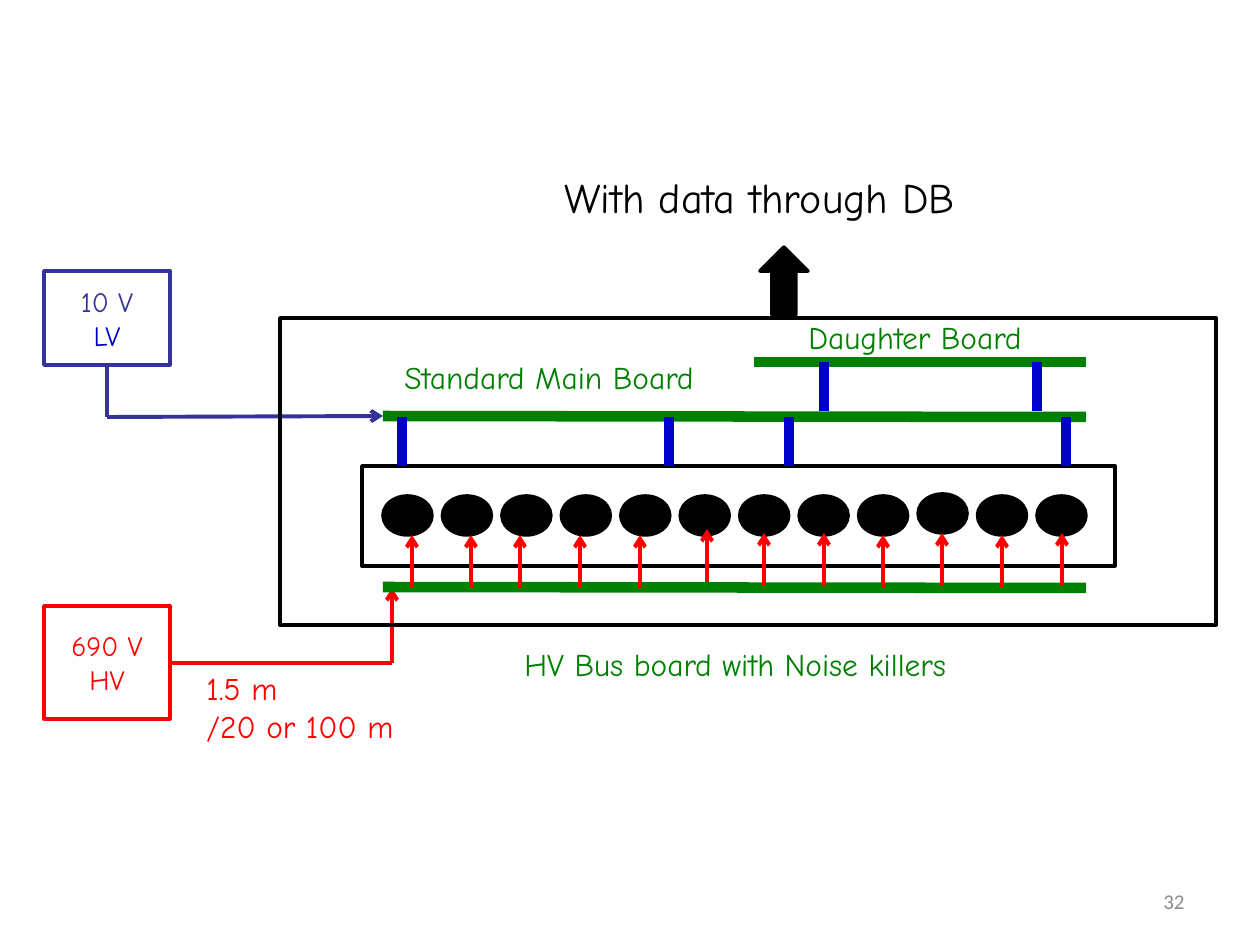
import pptx
import pptx.util
import pptx.dml.color
import pptx.enum.shapes
import pptx.enum.text
import pptx.oxml.ns
import lxml.etree
from dataclasses import dataclass

PX = 914400 / 126  # EMU in one px
SHAPE = pptx.enum.shapes.MSO_SHAPE
ALIGN = pptx.enum.text.PP_ALIGN
ANCHOR = pptx.enum.text.MSO_ANCHOR


@dataclass(frozen=True)
class Theme:
    font: str = "Comic Neue"
    number_font: str = "Calibri"
    black: str = "000000"
    green: str = "008000"
    blue: str = "0000CC"
    navy: str = "333399"
    red: str = "FF0000"
    grey: str = "8C8C8C"
    heading: int = 24
    label: int = 18
    supply: int = 16
    number: int = 12
    outline: float = 2
    wire: float = 2.25
    board: float = 6


THEME = Theme()


def emu(*lengths):
    return [round(n * PX) for n in lengths]


def rgb(color):
    return pptx.dml.color.RGBColor.from_string(color)


def add_box(slide, kind, box, color, filled=False):
    sp = slide.shapes.add_shape(kind, *emu(*box))
    sp.shadow.inherit = False
    if filled:
        sp.fill.solid()
        sp.fill.fore_color.rgb = rgb(color)
    else:
        sp.fill.background()
    sp.line.color.rgb = rgb(color)
    sp.line.width = pptx.util.Pt(THEME.outline)
    return sp


def add_line(slide, start, end, color, width, arrow=False):
    line = slide.shapes.add_connector(
        pptx.enum.shapes.MSO_CONNECTOR.STRAIGHT, *emu(*start, *end))
    line.line.color.rgb = rgb(color)
    line.line.width = pptx.util.Pt(width)
    qn = pptx.oxml.ns.qn
    if arrow:
        lxml.etree.SubElement(line.line._get_or_add_ln(), qn("a:tailEnd"), type="arrow")
    lxml.etree.SubElement(line._element.spPr, qn("a:effectLst"))


def write(tf, lines, size, align=ALIGN.LEFT, font=THEME.font):
    """Fill a text frame with one paragraph for each (text, color)."""
    for i, (text, color) in enumerate(lines):
        p = tf.add_paragraph() if i else tf.paragraphs[0]
        p.alignment = align
        r = p.add_run()
        r.text = text
        r.font.name = font
        r.font.size = pptx.util.Pt(size)
        r.font.color.rgb = rgb(color)


def add_label(slide, box, lines, color, size=THEME.label):
    tf = slide.shapes.add_textbox(*emu(*box)).text_frame
    tf.word_wrap = False
    tf.auto_size = pptx.enum.text.MSO_AUTO_SIZE.SHAPE_TO_FIT_TEXT
    write(tf, [(text, color) for text in lines], size)


def add_supply(slide, box, color, lines):
    sp = add_box(slide, SHAPE.RECTANGLE, box, color)
    sp.text_frame.vertical_anchor = ANCHOR.MIDDLE
    write(sp.text_frame, lines, THEME.supply, ALIGN.CENTER)


def add_tubes(slide, box):
    """Row of twelve tubes in a frame, each fed by an arrow from below."""
    x, y, w, h = box
    for i in range(12):
        rise = 2 if i == 9 else 0
        add_box(slide, SHAPE.OVAL, (x + 21 + i * 654 / 11, y + 30 - rise, 49, 39),
                THEME.black, filled=True)
    add_box(slide, SHAPE.RECTANGLE, box, THEME.black)


def add_feeds(slide, x, y):
    """HV arrows rising from the bus: (offset, lift) for each tube."""
    feeds = [(29, 0), (88, 0), (137, 0), (197, 0), (257, 0), (324, 6),
             (381, 2), (441, 2), (500, 0), (559, 2), (619, 0), (679, 2)]
    for dx, lift in feeds:
        add_line(slide, (x + dx, y - lift), (x + dx, y - lift - 53),
                 THEME.red, THEME.wire, arrow=True)


def add_crate(slide, box):
    """Frame with boards, their connectors, the tubes and the bus."""
    x, y, w, h = box
    left, right = x + 103, x + 806
    add_tubes(slide, (x + 82, y + 148, 753, 100))

    # Boards: left end, right end
    boards = [((left, y + 98), (right, y + 99)),
              ((x + 474, y + 44), (right, y + 44)),
              ((left, y + 269), (right, y + 270))]
    for start, end in boards:
        add_line(slide, start, end, THEME.green, THEME.board)

    # Connectors under the main board and the daughter board
    for top, offsets in ((99, (122, 389, 509, 786)), (44, (544, 757))):
        for dx in offsets:
            add_line(slide, (x + dx, y + top), (x + dx, y + top + 49),
                     THEME.blue, THEME.board)

    add_label(slide, (x + 112, y + 34, 350, 50), ["Standard Main Board"], THEME.green)
    add_label(slide, (x + 516, y - 6, 271, 50), ["Daughter Board"], THEME.green)
    add_label(slide, (x + 232, y + 321, 495, 50),
              ["HV Bus board with Noise killers"], THEME.green)
    add_box(slide, SHAPE.RECTANGLE, box, THEME.black)
    add_feeds(slide, x + 103, y + 270)


def add_low_voltage(slide, box):
    x, y, w, h = box
    add_supply(slide, box, THEME.navy, [("10 V", THEME.navy), ("LV", THEME.blue)])
    corner = (x + 63, y + 146)
    add_line(slide, (x + 63, y + h), corner, THEME.navy, THEME.wire)
    add_line(slide, corner, (x + 339, y + 145), THEME.navy, THEME.wire, arrow=True)


def add_high_voltage(slide, box):
    x, y, w, h = box
    add_supply(slide, box, THEME.red, [("690 V", THEME.red), ("HV", THEME.red)])
    corner = (x + 348, y + 57)
    add_line(slide, (x + w, y + 57), corner, THEME.red, THEME.wire)
    add_line(slide, corner, (x + 348, y - 18), THEME.red, THEME.wire, arrow=True)
    add_label(slide, (x + 150, y + 57, 219, 89), ["1.5 m", "/20 or 100 m"], THEME.red)


def add_data_output(slide, box):
    x, y, w, h = box
    add_label(slide, (x, y, w, 63), ["With data through DB"], THEME.black, THEME.heading)
    add_box(slide, SHAPE.UP_ARROW, (x + 208, y + 82, 48, 68), THEME.black, filled=True)


def add_slide_number(slide, box):
    tf = slide.shapes.add_textbox(*emu(*box)).text_frame
    tf.word_wrap = True
    tf.vertical_anchor = ANCHOR.MIDDLE
    write(tf, [("32", THEME.grey)], THEME.number, ALIGN.RIGHT, THEME.number_font)


def main():
    prs = pptx.Presentation()
    prs.slide_width, prs.slide_height = emu(1260, 945)
    slide = prs.slides.add_slide(prs.slide_layouts[6])
    add_low_voltage(slide, (44, 271, 126, 94))
    add_high_voltage(slide, (44, 606, 126, 113))
    add_crate(slide, (280, 318, 936, 307))
    add_data_output(slide, (552, 165, 465, 150))
    add_slide_number(slide, (903, 876, 294, 50))
    prs.save("out.pptx")


if __name__ == "__main__":
    main()
